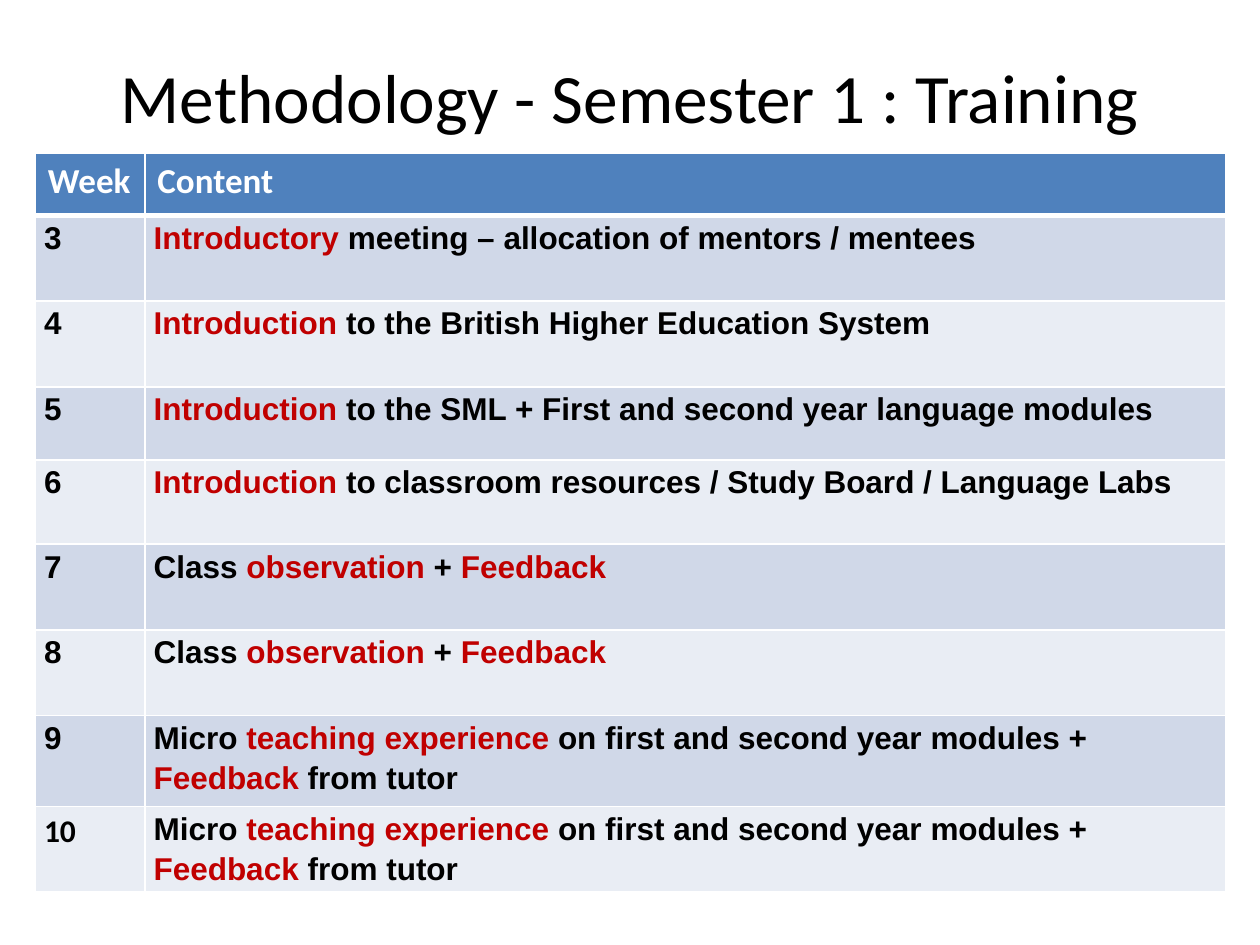
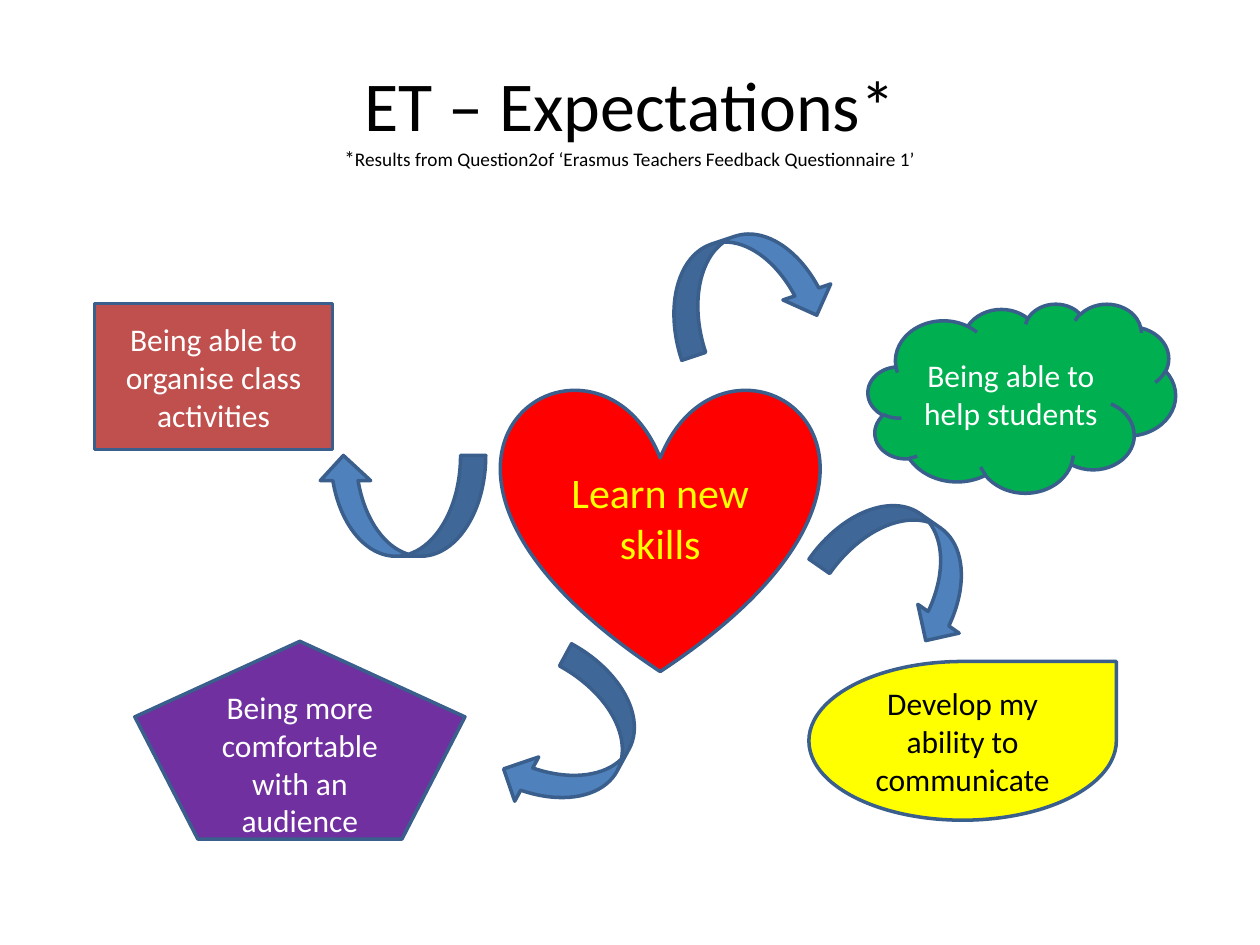
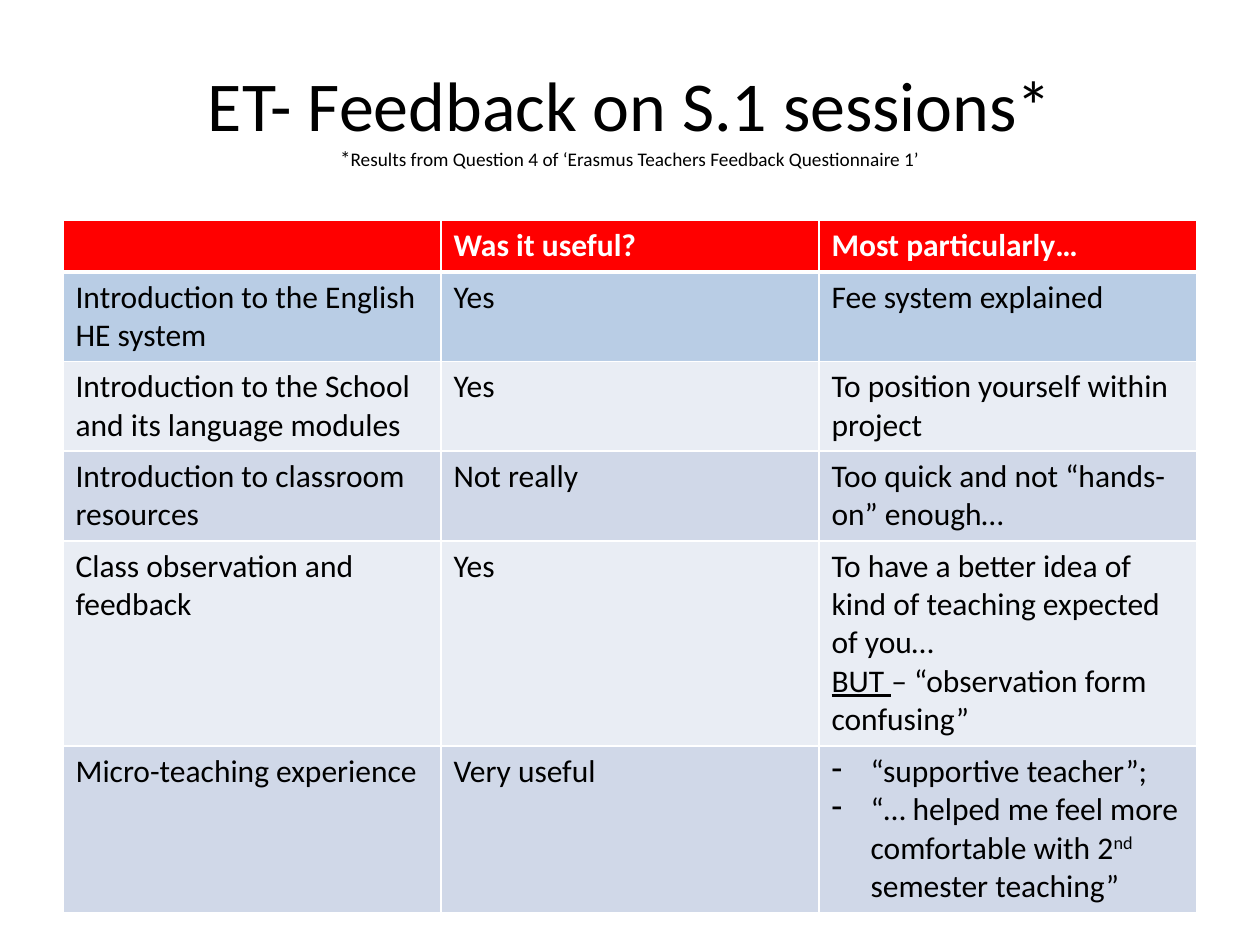
from dataclasses import dataclass
from typing import NamedTuple

from lxml.etree import SubElement
from pptx import Presentation
from pptx.dml.color import RGBColor
from pptx.enum.shapes import MSO_SHAPE as Preset
from pptx.enum.text import MSO_ANCHOR as Anchor, MSO_AUTO_SIZE as AutoSize, PP_ALIGN as Align
from pptx.oxml.ns import qn
from pptx.util import Inches, Pt

COLOURS = {
    "black": "000000",
    "white": "FFFFFF",
    "blue": "4F81BD",
    "outline": "3A5F8C",
    "band": "D0D8E8",
    "pale band": "E9EDF4",
    "sky band": "B9CDE5",
    "dark red": "C00000",
    "red": "FF0000",
    "brick": "C0504D",
    "green": "00B050",
    "purple": "7030A0",
    "yellow": "FFFF00",
}
BODY_FONT = "Calibri"
TABLE_FONT = "Arial"


class Span(NamedTuple):
    text: str
    size: float = 18
    colour: str = "black"
    font: str = BODY_FONT
    bold: bool = False
    underline: bool = False
    superscript: bool = False


@dataclass(frozen=True)
class Line:
    spans: tuple[Span, ...]
    spacing: float | None = None
    dash: bool = False


@dataclass(frozen=True)
class Cell:
    lines: tuple[Line, ...]
    fill: str
    tight: bool = False
    header: bool = False


@dataclass(frozen=True)
class Grid:
    left: float
    top: float
    columns: tuple[float, ...]
    heights: tuple[float, ...]
    rows: list[list[Cell]]


class Expectation(NamedTuple):
    preset: Preset
    left: float
    top: float
    width: float
    height: float
    fill: str
    text: str
    colour: str = "white"
    size: float = 18


class Swirl(NamedTuple):
    preset: Preset
    left: float
    top: float
    rotation: float


def rgb(name: str) -> RGBColor:
    return RGBColor.from_string(COLOURS[name])


def add_span(paragraph, span: Span) -> None:
    run = paragraph.add_run()
    run.text = span.text
    run.font.size = Pt(span.size)
    run.font.name = span.font
    run.font.bold = span.bold
    run.font.underline = span.underline
    run.font.color.rgb = rgb(span.colour)
    if span.superscript:
        run._r.get_or_add_rPr().set("baseline", "30000")


def add_dash(paragraph) -> None:
    properties = paragraph._p.get_or_add_pPr()
    indent = Inches(0.31)
    properties.set("marL", str(indent))
    properties.set("indent", str(-indent))
    SubElement(properties, qn("a:buFontTx"))
    SubElement(properties, qn("a:buChar"), char="-")


def add_borders(cell, bottom: float) -> None:
    properties = cell._tc.get_or_add_tcPr()
    for side, points in (("L", 1), ("R", 1), ("T", 1), ("B", bottom)):
        border = SubElement(properties, qn(f"a:ln{side}"), w=str(Pt(points)))
        fill = SubElement(border, qn("a:solidFill"))
        SubElement(fill, qn("a:srgbClr"), val=COLOURS["white"])


def fill_cell(cell, content: Cell) -> None:
    add_borders(cell, 3 if content.header else 1)
    cell.fill.solid()
    cell.fill.fore_color.rgb = rgb(content.fill)
    if content.tight:
        cell.margin_left = cell.margin_right = Inches(0.07)
        cell.margin_top = cell.margin_bottom = Inches(0)
    for index, line in enumerate(content.lines):
        frame = cell.text_frame
        paragraph = frame.add_paragraph() if index else frame.paragraphs[0]
        if line.spacing:
            paragraph.line_spacing = line.spacing
        if line.dash:
            add_dash(paragraph)
        for span in line.spans:
            add_span(paragraph, span)


def draw_grid(slide, grid: Grid) -> None:
    table = slide.shapes.add_table(
        len(grid.rows), len(grid.columns), Inches(grid.left), Inches(grid.top),
        Inches(sum(grid.columns)), Inches(sum(grid.heights)),
    ).table
    table.horz_banding = False
    for column, width in zip(table.columns, grid.columns):
        column.width = Inches(width)
    for row, height, contents in zip(table.rows, grid.heights, grid.rows):
        row.height = Inches(height)
        for cell, content in zip(row.cells, contents):
            fill_cell(cell, content)


def start_slide(deck, heading: Span, top: float, height: float, source: str = ""):
    slide = deck.slides.add_slide(deck.slide_layouts[5])
    title = slide.shapes.title
    title.left, title.top = Inches(0.5), Inches(top)
    title.width, title.height = Inches(9), Inches(height)
    frame = title.text_frame
    frame.auto_size = AutoSize.NONE
    frame.vertical_anchor = Anchor.MIDDLE
    paragraph = frame.paragraphs[0]
    paragraph.alignment = Align.CENTER
    add_span(paragraph, heading)
    if source:
        paragraph.add_line_break()
        add_span(paragraph, Span("*", 12))
        add_span(paragraph, Span(source, 11))
    return slide


def draw_outlined(slide, preset: Preset, left: float, top: float,
                  width: float, height: float, fill: str):
    shape = slide.shapes.add_shape(
        preset, Inches(left), Inches(top), Inches(width), Inches(height))
    shape.shadow.inherit = False
    shape.fill.solid()
    shape.fill.fore_color.rgb = rgb(fill)
    shape.line.color.rgb = rgb("outline")
    shape.line.width = Pt(2)
    return shape


def draw_expectation(slide, item: Expectation) -> None:
    shape = draw_outlined(slide, *item[:6])
    frame = shape.text_frame
    frame.word_wrap = True
    frame.vertical_anchor = Anchor.MIDDLE
    paragraph = frame.paragraphs[0]
    paragraph.alignment = Align.CENTER
    add_span(paragraph, Span(item.text, item.size, item.colour))


def draw_swirl(slide, swirl: Swirl) -> None:
    width, height = (1.33, 0.8) if swirl.preset == Preset.CURVED_DOWN_ARROW else (0.8, 1.33)
    shape = draw_outlined(slide, swirl.preset, swirl.left, swirl.top, width, height, "blue")
    shape.rotation = swirl.rotation


def header_cell(text: str, size: float, fill: str) -> Cell:
    spans = (Span(text, size, "white", bold=True),) if text else ()
    return Cell((Line(spans),), fill, header=True)


def band(index: int) -> str:
    return "pale band" if index % 2 else "band"


def training_cell(spans: tuple[Span, ...], index: int) -> Cell:
    return Cell((Line(spans, spacing=1.15),), band(index), tight=True)


def plain(text: str) -> Span:
    return Span(text, font=TABLE_FONT, bold=True)


def key(text: str) -> Span:
    return plain(text)._replace(colour="dark red")


OBSERVATION = (plain("Class "), key("observation"), plain(" + "), key("Feedback"))
MICRO_TEACHING = (
    plain("Micro "), key("teaching experience "),
    plain("on first and second year modules + "), key("Feedback"), plain(" from tutor"),
)
TRAINING = {
    3: (key("Introductory"), plain(" meeting – allocation of mentors / mentees")),
    4: (key("Introduction"), plain(" to the British Higher Education System")),
    5: (key("Introduction"), plain(" to the SML + First and second year language modules")),
    6: (key("Introduction"), plain(" to classroom resources / Study Board / Language Labs")),
    7: OBSERVATION,
    8: OBSERVATION,
    9: MICRO_TEACHING,
    10: MICRO_TEACHING,
}

EXPECTATIONS = [
    Expectation(Preset.RECTANGLE, 0.75, 2.41, 1.89, 1.16, "brick",
                "Being able to organise class activities"),
    Expectation(Preset.CLOUD, 6.89, 2.41, 2.44, 1.5, "green", "Being able to help students"),
    Expectation(Preset.REGULAR_PENTAGON, 1.07, 5.09, 2.62, 1.57, "purple",
                "Being more comfortable with an audience"),
    Expectation(Preset.TEAR, 6.42, 5.25, 2.44, 1.26, "yellow",
                "Develop my ability to communicate", "black"),
    Expectation(Preset.HEART, 3.98, 3.07, 2.52, 2.26, "red", "Learn new skills", "yellow", 24),
]
SWIRLS = [
    Swirl(Preset.CURVED_DOWN_ARROW, 5.25, 1.87, 341.5),
    Swirl(Preset.CURVED_LEFT_ARROW, 2.79, 3.35, 90),
    Swirl(Preset.CURVED_LEFT_ARROW, 4.17, 5.22, 28.5),
    Swirl(Preset.CURVED_DOWN_ARROW, 6.53, 4.09, 34.9),
]

FEEDBACK = [
    ("Introduction to the English HE system", "Yes",
     (Line((Span("Fee system explained"),)),)),
    ("Introduction to the School and its language modules", "Yes",
     (Line((Span("To position yourself within project"),)),)),
    ("Introduction to classroom resources", "Not really",
     (Line((Span("Too quick and not “hands-on” enough…"),)),)),
    ("Class observation and feedback", "Yes", (
        Line((Span("To have a better idea of kind of teaching expected of you…"),)),
        Line((Span("BUT ", underline=True), Span("– “observation form confusing”"))),
    )),
    ("Micro-teaching experience", "Very useful", (
        Line((Span("“supportive teacher”;"),), dash=True),
        Line((Span("“… helped me feel more comfortable with 2"),
              Span("nd", superscript=True), Span(" semester teaching”")), dash=True),
    )),
]


def build_training(deck) -> None:
    slide = start_slide(deck, Span("Methodology - Semester 1 : Training", 39.6), 0.21, 1.1)
    rows = [[header_cell(text, 20, "blue") for text in ("Week", "Content")]]
    for index, (week, content) in enumerate(TRAINING.items()):
        number = plain(str(week))
        if week == 10:
            number = number._replace(font=BODY_FONT)
        rows.append([training_cell((number,), index), training_cell(content, index)])
    heights = (0.49, 0.68, 0.68, 0.58, 0.67, 0.68, 0.68, 0.72, 0.68)
    draw_grid(slide, Grid(0.28, 1.22, (0.87, 8.58), heights, rows))


def build_expectations(deck) -> None:
    slide = start_slide(deck, Span("ET – Expectations*", 40), 0.3, 1.25,
                        "Results from Question2of ‘Erasmus Teachers Feedback Questionnaire 1’")
    for item in EXPECTATIONS:
        draw_expectation(slide, item)
    for swirl in SWIRLS:
        draw_swirl(slide, swirl)


def build_feedback(deck) -> None:
    slide = start_slide(deck, Span("ET- Feedback on S.1 sessions*", 40), 0.3, 1.25,
                        "Results from Question 4 of ‘Erasmus Teachers Feedback Questionnaire 1’")
    rows = [[header_cell(text, 18, "red")
             for text in ("", "Was it useful?", "Most particularly…")]]
    for index, (session, verdict, details) in enumerate(FEEDBACK):
        fill = band(index) if index else "sky band"
        rows.append([
            Cell((Line((Span(session),)),), fill),
            Cell((Line((Span(verdict),)),), fill),
            Cell(details, fill),
        ])
    heights = (0.41, 0.7, 0.71, 0.71, 1.63, 1.32)
    draw_grid(slide, Grid(0.5, 1.75, (3, 3, 3), heights, rows))


def main() -> None:
    deck = Presentation()
    deck.slide_width, deck.slide_height = Inches(10), Inches(7.5)
    build_training(deck)
    build_expectations(deck)
    build_feedback(deck)
    deck.save("out.pptx")


if __name__ == "__main__":
    main()
